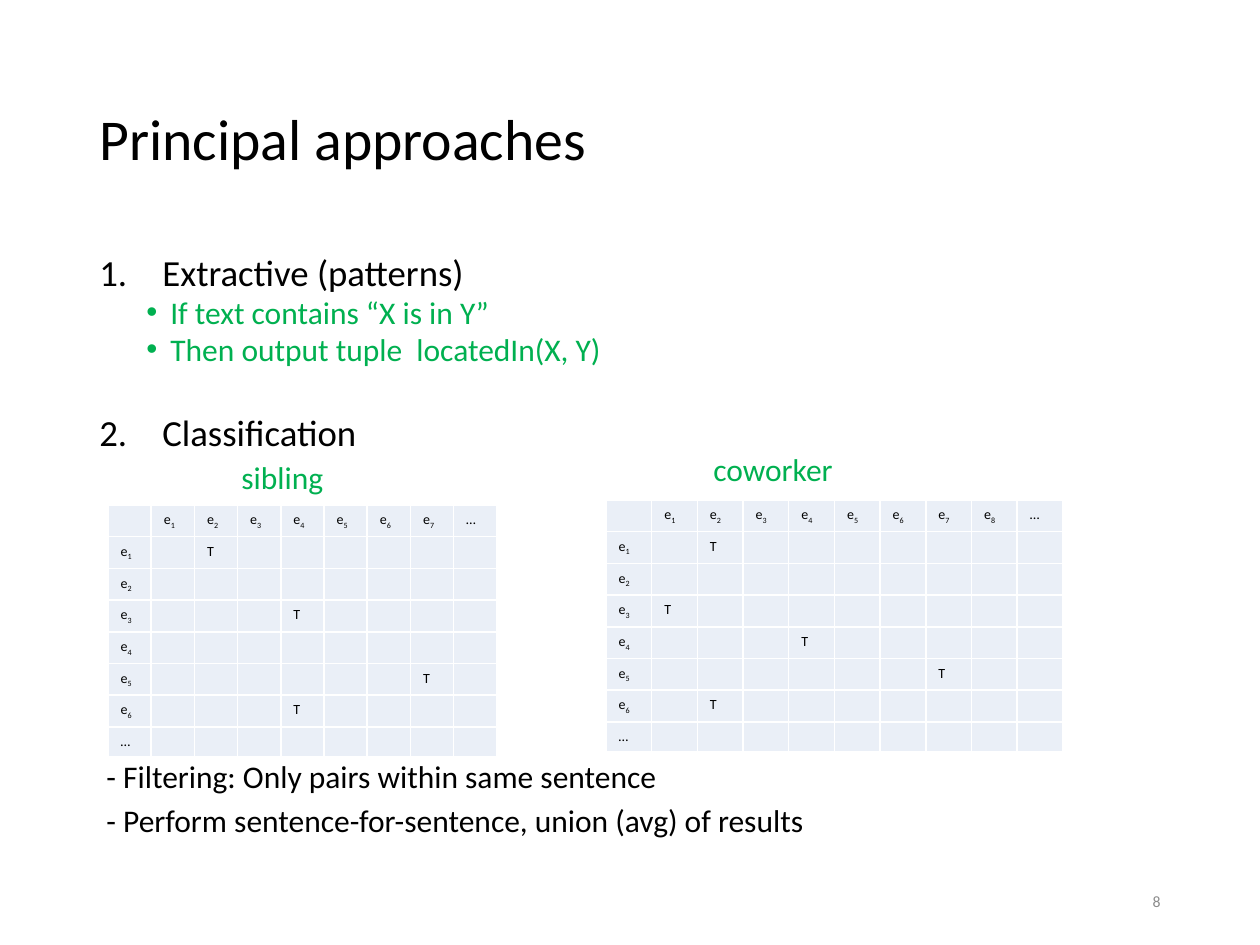
from lxml.etree import SubElement
from pptx import Presentation
from pptx.dml.color import RGBColor as RGB
from pptx.enum.text import MSO_ANCHOR as Anchor, PP_ALIGN as Align
from pptx.oxml.ns import qn
from pptx.util import Emu, Pt

PX = 914400 / 126
BLACK = RGB(0x00, 0x00, 0x00)
GREEN = RGB(0x00, 0xB0, 0x50)
GREY = RGB(0x8C, 0x8C, 0x8C)
PALE = RGB(0xEA, 0xEF, 0xF7)


def px(*vals):
    return [Emu(round(v * PX)) for v in vals]


def write(par, text, size=18, color=BLACK, sub=False):
    run = par.add_run()
    run.text = text
    font = run.font
    font.name, font.size = "Calibri", Pt(size)
    font.color.rgb = color
    if sub:
        run._r.get_or_add_rPr().set("baseline", "-25000")


deck = Presentation()
deck.slide_width, deck.slide_height = px(1260, 945)
slide = deck.slides.add_slide(deck.slide_layouts[6])
shapes = slide.shapes

# Title, slide number and table captions
labels = [
    ("Principal approaches", (87, 50, 1086, 183), 33, BLACK, Anchor.MIDDLE, Align.LEFT),
    ("8", (890, 876, 283, 50), 9, GREY, Anchor.MIDDLE, Align.RIGHT),
    ("sibling", (229, 452, 347, 50), 18, GREEN, Anchor.TOP, Align.LEFT),
    ("coworker", (701, 444, 347, 50), 18, GREEN, Anchor.TOP, Align.LEFT),
]
for text, box, size, color, anchor, align in labels:
    frame = shapes.add_textbox(*px(*box)).text_frame
    frame.word_wrap = True
    frame.vertical_anchor = anchor
    par = frame.paragraphs[0]
    par.alignment = align
    if size == 33:
        par.line_spacing = 0.9
    write(par, text, size, color)

# Body list: text, size, color, space before, bullet
body = [
    ("Extractive (patterns)", 21, BLACK, 7.5, 1),
    ("If text contains “X is in Y”", 18, GREEN, 3.8, "•"),
    ("Then output tuple  locatedIn(X, Y)", 18, GREEN, 3.8, "•"),
    ("Classification", 21, BLACK, 29, 2),
    (" - Filtering: Only pairs within same sentence", 18, BLACK, 178, None),
    (" - Perform sentence-for-sentence, union (avg) of results", 18, BLACK, 7.5, None),
]
frame = shapes.add_textbox(*px(87, 252, 1149, 643)).text_frame
frame.word_wrap = True
for i, (text, size, color, gap, mark) in enumerate(body):
    par = frame.add_paragraph() if i else frame.paragraphs[0]
    par.line_spacing = 0.8
    par.space_before = Pt(gap)
    write(par, text, size, color)
    props = par._p.get_or_add_pPr()
    if mark == "•":
        par.level = 1
        left, hang = px(71, 24)
        SubElement(props, qn("a:buFont"), typeface="Arial")
        SubElement(props, qn("a:buChar"), char=mark)
    elif mark:
        left = hang = px(63)[0]
        SubElement(props, qn("a:buAutoNum"), type="arabicPeriod", startAt=str(mark))
    else:
        continue
    props.set("marL", str(left))
    props.set("indent", str(-hang))

# Relation tables: place, entity count, marked (row, column) cells
grids = [
    ((108, 505, 389, 236), 7, [(1, 2), (3, 4), (5, 7), (6, 4)]),
    ((606, 500, 457, 236), 8, [(1, 2), (3, 1), (4, 4), (5, 7), (6, 2)]),
]
for box, count, marks in grids:
    rows, cols = 8, count + 2
    table = shapes.add_table(rows, cols, *px(*box)).table
    table.first_row = table.horz_banding = False
    for r in range(rows):
        table.rows[r].height = px(25)[0]
        for c in range(cols):
            cell = table.cell(r, c)
            par = cell.text_frame.paragraphs[0]
            if (r, c) in marks:
                write(par, "T", 8)
            elif (r, c) in [(0, cols - 1), (rows - 1, 0)]:
                write(par, "…", 8)
            elif (r == 0) != (c == 0):
                write(par, "e", 8)
                write(par, str(r + c), 8, sub=True)
            else:
                SubElement(par._p, qn("a:endParaRPr"), sz="800")
            props = cell._tc.get_or_add_tcPr()
            for side in "LRTB":
                line = SubElement(props, qn("a:ln" + side), w=str(Pt(1)))
                fill = SubElement(line, qn("a:solidFill"))
                SubElement(fill, qn("a:srgbClr"), val="FFFFFF")
            cell.fill.solid()
            cell.fill.fore_color.rgb = PALE

deck.save("out.pptx")
